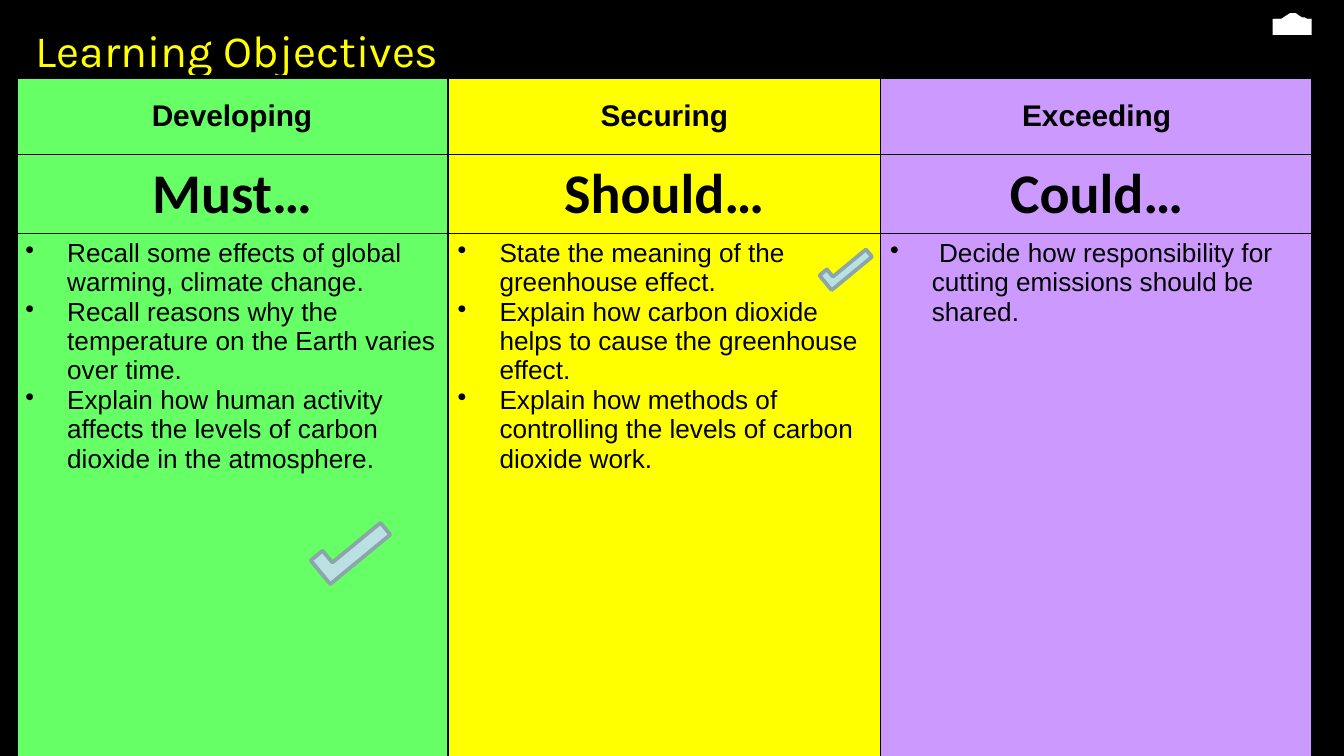
"""Build the learning objectives slide with its three-level table."""
from dataclasses import dataclass

from lxml.etree import SubElement
from pptx import Presentation
from pptx.dml.color import RGBColor
from pptx.enum.shapes import MSO_SHAPE
from pptx.enum.text import MSO_ANCHOR, MSO_AUTO_SIZE, PP_ALIGN
from pptx.oxml.ns import qn
from pptx.util import Cm, Pt


@dataclass(frozen=True)
class Theme:
    black: RGBColor = RGBColor(0x00, 0x00, 0x00)
    white: RGBColor = RGBColor(0xFF, 0xFF, 0xFF)
    yellow: RGBColor = RGBColor(0xFF, 0xFF, 0x00)
    green: RGBColor = RGBColor(0x66, 0xFF, 0x66)
    purple: RGBColor = RGBColor(0xCC, 0x99, 0xFF)
    tick: RGBColor = RGBColor(0xBB, 0xE0, 0xE3)
    tick_line: RGBColor = RGBColor(0x8A, 0xA6, 0xA8)
    title: Pt = Pt(24)
    level: Pt = Pt(16)
    verb: Pt = Pt(30)
    body: Pt = Pt(14)
    thin: Pt = Pt(1)
    thick: Pt = Pt(2.25)


def set_borders(cell, widths):
    tc_pr = cell._tc.get_or_add_tcPr()
    for side, width in zip("LRTB", widths):
        ln = SubElement(tc_pr, qn(f"a:ln{side}"), w=str(int(width)))
        SubElement(SubElement(ln, qn("a:solidFill")), qn("a:srgbClr"), val=str(theme.black))


def paint(sp, color):
    sp.shadow.inherit = False
    sp.fill.solid()
    sp.fill.fore_color.rgb = color
    sp.line.fill.background()


theme = Theme()
columns = [
    ("Developing", "Must…", theme.green, [
        "Recall some effects of global warming, climate change.",
        "Recall reasons why the temperature on the Earth varies over time.",
        "Explain how human activity affects the levels of carbon dioxide in the atmosphere.",
    ]),
    ("Securing", "Should…", theme.yellow, [
        "State the meaning of the greenhouse effect.",
        "Explain how carbon dioxide helps to cause the greenhouse effect.",
        "Explain how methods of controlling the levels of carbon dioxide work.",
    ]),
    ("Exceeding", "Could…", theme.purple, [
        " Decide how responsibility for cutting emissions should be shared.",
    ]),
]
row_styles = [("Arial", theme.level, True), ("Calibri", theme.verb, True), ("Arial", theme.body, False)]

prs = Presentation()
prs.slide_width, prs.slide_height = Cm(25.4), Cm(14.29)
s = prs.slides.add_slide(prs.slide_layouts[5])
s.background.fill.solid()
s.background.fill.fore_color.rgb = theme.black

title = s.shapes.title
title.left, title.top, title.width, title.height = Cm(0.42), Cm(0.3), Cm(18.24), Cm(2.31)
tf = title.text_frame
tf.text = "Learning Objectives"
tf.auto_size = MSO_AUTO_SIZE.NONE
tf.vertical_anchor = MSO_ANCHOR.TOP
p = tf.paragraphs[0]
p.alignment = PP_ALIGN.LEFT
p.font.name, p.font.size, p.font.color.rgb = "Karla", theme.title, theme.yellow

table = s.shapes.add_table(3, 3, Cm(0.3), Cm(1.46), Cm(24.51), Cm(12.88)).table
for row, height in zip(table.rows, (1.46, 1.46, 9.96)):
    row.height = Cm(height)
for col, (level, verb, color, goals) in enumerate(columns):
    table.columns[col].width = Cm(8.17)
    for row, (lines, (font, size, bold)) in enumerate(zip(([level], [verb], goals), row_styles)):
        cell = table.cell(row, col)
        edges = (col == 0, col == 2, row == 0, row == 2)
        set_borders(cell, [theme.thick if edge else theme.thin for edge in edges])
        cell.fill.solid()
        cell.fill.fore_color.rgb = color
        cell.margin_left = cell.margin_right = Cm(0.18)
        cell.margin_top = cell.margin_bottom = Cm(0.1)
        cell.vertical_anchor = MSO_ANCHOR.TOP if row == 2 else MSO_ANCHOR.MIDDLE
        cell.text = "\n".join(lines)
        for p in cell.text_frame.paragraphs:
            p.font.name, p.font.size, p.font.bold = font, size, bold
            p.font.color.rgb = theme.black
            if row < 2:
                p.alignment = PP_ALIGN.CENTER
                continue
            p_pr = p._p.get_or_add_pPr()
            p_pr.set("marL", str(int(Cm(0.79))))
            p_pr.set("indent", str(-int(Cm(0.79))))
            bullet = SubElement(p_pr, qn("a:buChar"), char="•")
            p_pr.insert(0, bullet)

board = s.shapes.add_shape(MSO_SHAPE.RECTANGLE, Cm(24.05), Cm(0.36), Cm(0.74), Cm(0.3))
paint(board, theme.white)
hill = [(24.08, 0.36), (24.21, 0.36), (24.33, 0.28), (24.38, 0.25), (24.49, 0.25),
        (24.56, 0.3), (24.61, 0.33), (24.66, 0.33), (24.71, 0.36), (24.79, 0.36)]
points = [(Cm(x), Cm(y)) for x, y in hill]
builder = s.shapes.build_freeform(*points[0])
builder.add_line_segments(points[1:], close=True)
paint(builder.convert_to_shape(), theme.white)

for left, top, width, height in ((5.89, 10.06, 1.47, 0.58), (15.49, 4.85, 0.99, 0.36)):
    tick = s.shapes.add_shape(MSO_SHAPE.RECTANGLE, Cm(left), Cm(top), Cm(width), Cm(height))
    tick._element.spPr.find(qn("a:prstGeom")).set("prst", "corner")
    paint(tick, theme.tick)
    tick.rotation = 320.5
    tick.line.color.rgb = theme.tick_line
    tick.line.width = Pt(2)

prs.save("out.pptx")
